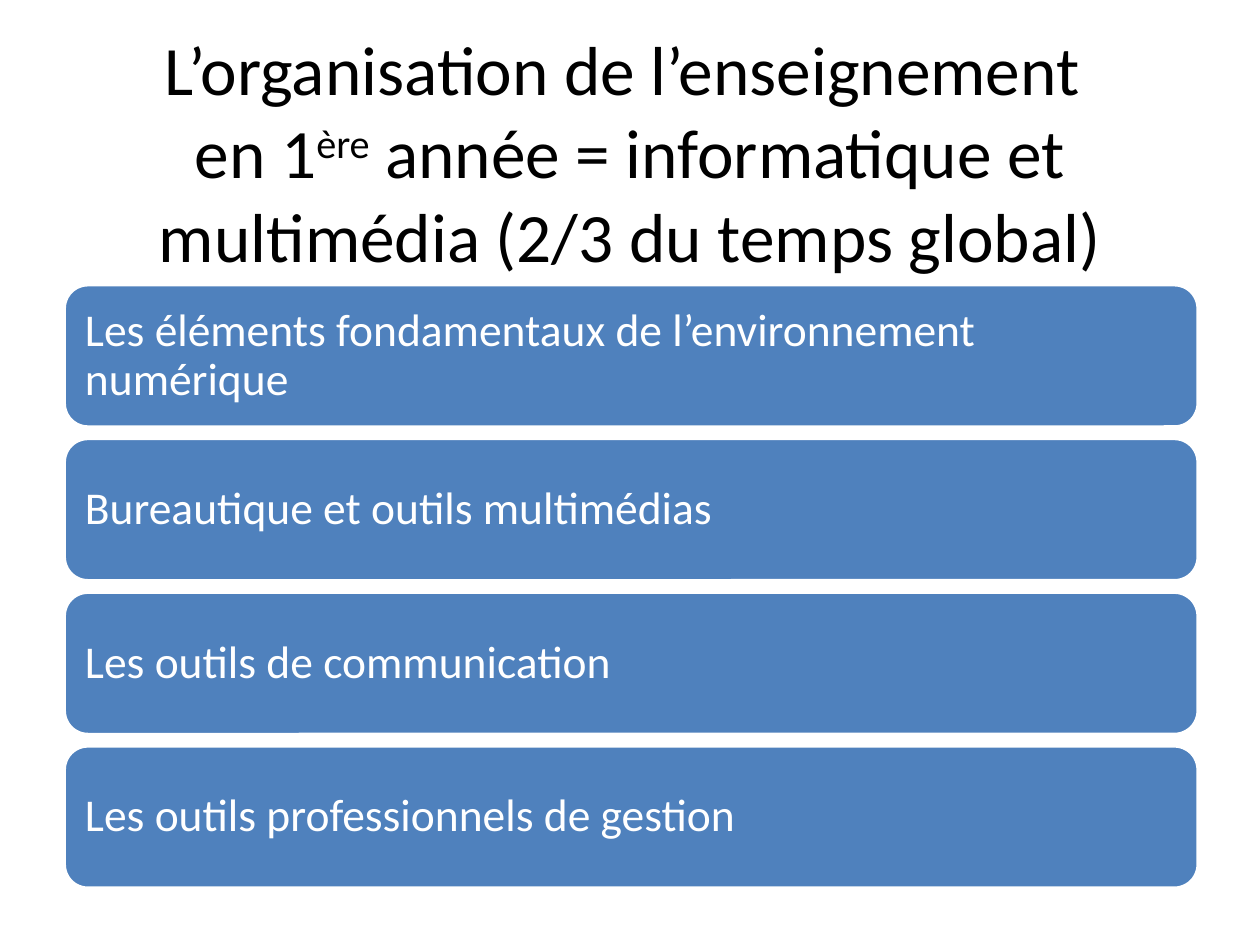
from dataclasses import dataclass

from pptx import Presentation
from pptx import util as u
from pptx.dml.color import RGBColor
from pptx.enum import shapes, text


@dataclass(frozen=True)
class Theme:
    font: str = "Calibri"
    ink: str = "000000"
    paper: str = "FFFFFF"
    bar: str = "4F81BD"
    title_size: float = 39.6
    bar_size: float = 26
    bar_line: float = 2


@dataclass(frozen=True)
class BarStack:
    """One column of equal rows, in inches."""
    left: float = 0.51
    top: float = 2.26
    width: float = 9
    height: float = 1.13
    pitch: float = 1.22
    inset: float = 0.11

    def box(self, row: int) -> list:
        return [u.Inches(v) for v in (
            self.left, self.top + row * self.pitch, self.width, self.height)]


THEME = Theme()
STACK = BarStack()

# Title runs: text and baseline shift in thousandths of a percent
TITLE = (
    ("en 1", 0),
    ("ère", 30000),
    (" année = informatique et multimédia (2/3 du temps global)", 0),
)
TOPICS = (
    "Les éléments fondamentaux de l’environnement numérique",
    "Bureautique et outils multimédias",
    "Les outils de communication",
    "Les outils professionnels de gestion",
)


def apply(target, **values) -> None:
    for name, value in values.items():
        setattr(target, name, value)


def add_run(p, content: str, size: float, color: str, baseline: int = 0) -> None:
    r = p.add_run()
    r.text = content
    apply(r.font, name=THEME.font, size=u.Pt(size))
    r.font.color.rgb = RGBColor.from_string(color)
    if baseline:
        r.font._element.set("baseline", str(baseline))


def draw_title(sp) -> None:
    apply(sp, left=u.Inches(0.5), top=u.Inches(0.3),
          width=u.Inches(9), height=u.Inches(1.8))
    tf = sp.text_frame
    apply(tf, word_wrap=True, auto_size=text.MSO_AUTO_SIZE.NONE,
          vertical_anchor=text.MSO_ANCHOR.MIDDLE)
    p = tf.paragraphs[0]
    p.alignment = text.PP_ALIGN.CENTER
    add_run(p, "L’organisation de l’enseignement ", THEME.title_size, THEME.ink)
    p.add_line_break()
    for content, baseline in TITLE:
        add_run(p, content, THEME.title_size, THEME.ink, baseline)


def draw_bar(s, row: int, topic: str) -> None:
    sp = s.shapes.add_shape(shapes.MSO_SHAPE.ROUNDED_RECTANGLE, *STACK.box(row))
    sp.shadow.inherit = False
    sp.fill.solid()
    sp.fill.fore_color.rgb = RGBColor.from_string(THEME.bar)
    sp.line.color.rgb = RGBColor.from_string(THEME.paper)
    sp.line.width = u.Pt(THEME.bar_line)
    tf = sp.text_frame
    apply(tf, word_wrap=True, vertical_anchor=text.MSO_ANCHOR.MIDDLE)
    apply(tf, **{f"margin_{side}": u.Inches(STACK.inset)
                 for side in ("left", "top", "right", "bottom")})
    p = tf.paragraphs[0]
    apply(p, alignment=text.PP_ALIGN.LEFT, line_spacing=0.9)
    add_run(p, topic, THEME.bar_size, THEME.paper)


def main() -> None:
    prs = Presentation()
    apply(prs, slide_width=u.Inches(10), slide_height=u.Inches(7.5))
    s = prs.slides.add_slide(prs.slide_layouts[5])  # title only
    draw_title(s.shapes.title)
    # Course topics
    for row, topic in enumerate(TOPICS):
        draw_bar(s, row, topic)
    prs.save("out.pptx")


if __name__ == "__main__":
    main()
